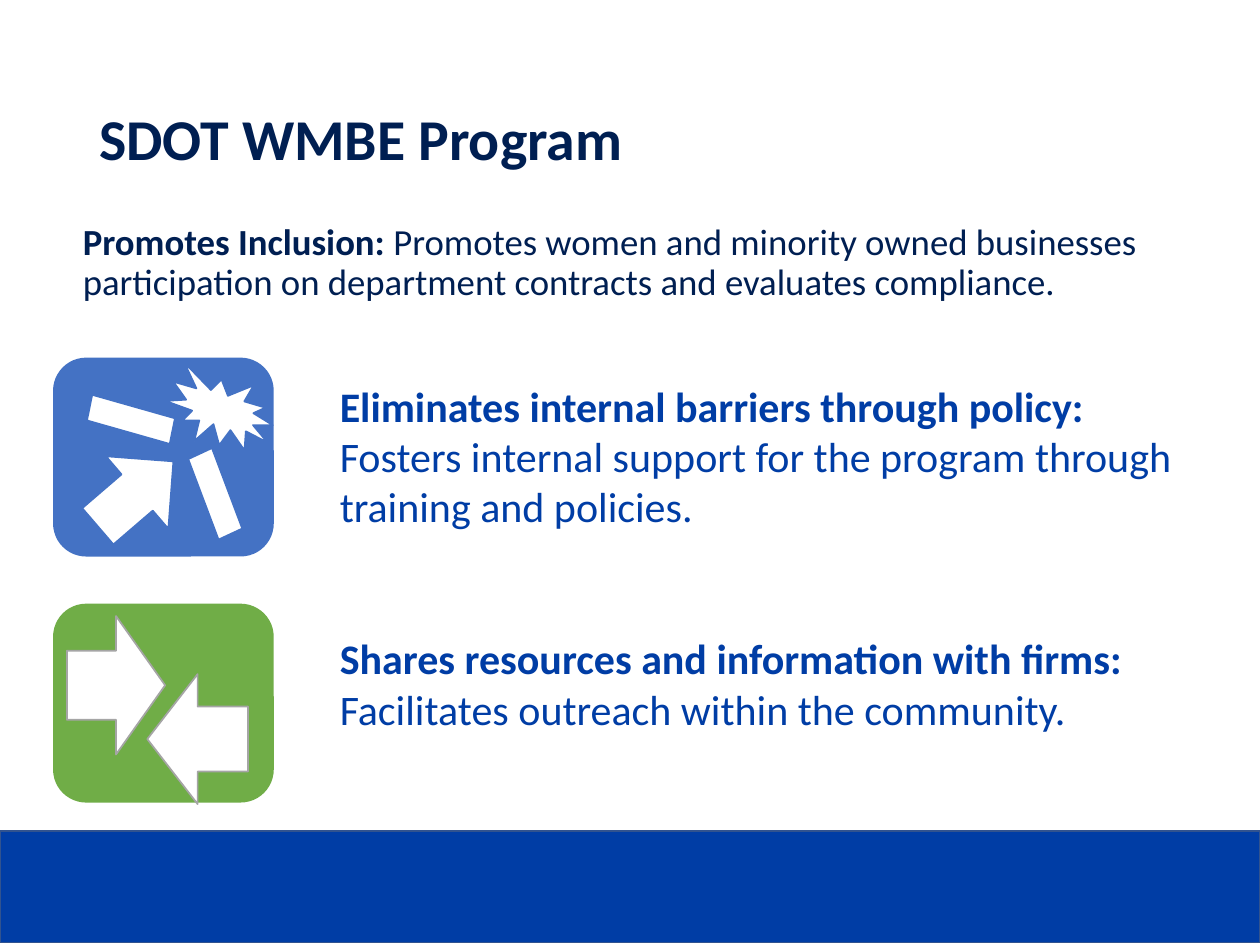
from pptx import Presentation
from pptx import util as u
from pptx.dml.color import RGBColor
from pptx.enum import shapes, text

NAVY = RGBColor(0x00, 0x1F, 0x52)
ROYAL = RGBColor(0x00, 0x3D, 0xA5)
BAND_EDGE = RGBColor(0x31, 0x53, 0x8F)
BLUE = RGBColor(0x44, 0x72, 0xC4)
GREEN = RGBColor(0x70, 0xAD, 0x47)
GRAY = RGBColor(0xA5, 0xA5, 0xA5)
WHITE = RGBColor(0xFF, 0xFF, 0xFF)
KIND = shapes.MSO_SHAPE

deck = Presentation()
deck.slide_width, deck.slide_height = u.Cm(25.4), u.Cm(19.05)
page = deck.slides.add_slide(deck.slide_layouts[6])


def add_figure(kind, place, fill, edge=None, turn=0):
    figure = page.shapes.add_shape(kind, *map(u.Cm, place))
    figure.shadow.inherit = False
    figure.rotation = turn
    figure.fill.solid()
    figure.fill.fore_color.rgb = fill
    if edge is None:
        figure.line.fill.background()
    else:
        figure.line.color.rgb = edge
        figure.line.width = u.Pt(1)


def add_text(place, paragraphs, size, color, indent=0, anchor="TOP", **spacing):
    box = page.shapes.add_textbox(*map(u.Cm, place))
    frame = box.text_frame
    frame.word_wrap = True
    frame.vertical_anchor = text.MSO_ANCHOR[anchor]
    for index, (lead, detail) in enumerate(paragraphs):
        para = frame.paragraphs[0] if index == 0 else frame.add_paragraph()
        para._p.get_or_add_pPr().set("marL", str(u.Cm(indent)))
        for name, value in spacing.items():
            if index or name != "space_before":
                setattr(para, name, value)
        for words, bold in ((lead, True), (detail, False)):
            if words:
                span = para.add_run()
                span.text = words
                for name, value in {"name": "Calibri", "size": u.Pt(size), "bold": bold}.items():
                    setattr(span.font, name, value)
                span.font.color.rgb = color


# Footer band
add_figure(KIND.RECTANGLE, (0, 16.76, 25.4, 2.24), ROYAL, BAND_EDGE)

# Icon tiles
for top, fill in ((12.17, GREEN), (7.21, BLUE)):
    add_figure(KIND.ROUNDED_RECTANGLE, (1.07, top, 4.45, 4.01), fill)

# Title and introduction
add_text((1.75, 1.02, 21.89, 3.68), [("SDOT WMBE Program", "")], 33, NAVY,
         anchor="MIDDLE", line_spacing=0.9)
add_text((0.15, 4.39, 24.03, 4.93),
         [("Promotes Inclusion: ",
           "Promotes women and minority owned businesses participation on "
           "department contracts and evaluates compliance.")],
         21, NAVY, indent=1.27, line_spacing=0.9)

# Two program goals, one beside each tile
add_text((4.06, 7.54, 20.07, 8.2),
         [("Eliminates internal barriers through policy: ",
           "Fosters internal support for the program through training and policies."),
          ("Shares resources and information with firms: ",
           "Facilitates outreach within the community.")],
         24, ROYAL, indent=2.54, space_before=u.Pt(58))

# Blue tile: an arrow breaking through a barrier
for kind, place, turn in (
    (KIND.RIGHT_ARROW, (1.73, 8.99, 2.01, 1.93), 319.3),
    (KIND.FLOWCHART_DATA, (2.31, 7.59, 0.66, 1.73), 101.5),
    (KIND.FLOWCHART_DATA, (4.01, 9.09, 0.66, 1.73), 335),
    (KIND.EXPLOSION1, (3.33, 7.54, 2.24, 1.52), 24.5),
):
    add_figure(kind, place, WHITE, BLUE, turn)

# Green tile: arrows in exchange
for kind, place in (
    (KIND.RIGHT_ARROW, (1.35, 12.42, 1.98, 2.79)),
    (KIND.LEFT_ARROW, (2.97, 13.59, 2.03, 2.62)),
):
    add_figure(kind, place, WHITE, GRAY)

deck.save("out.pptx")
